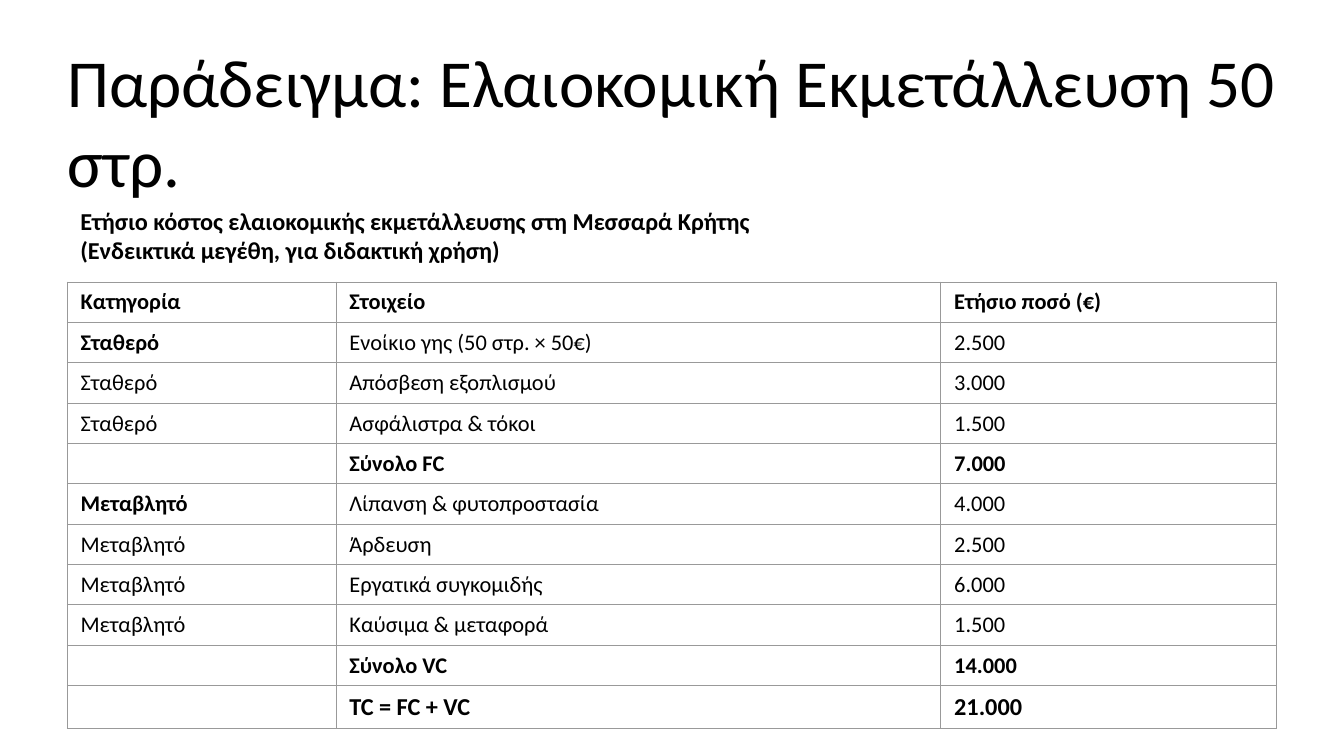
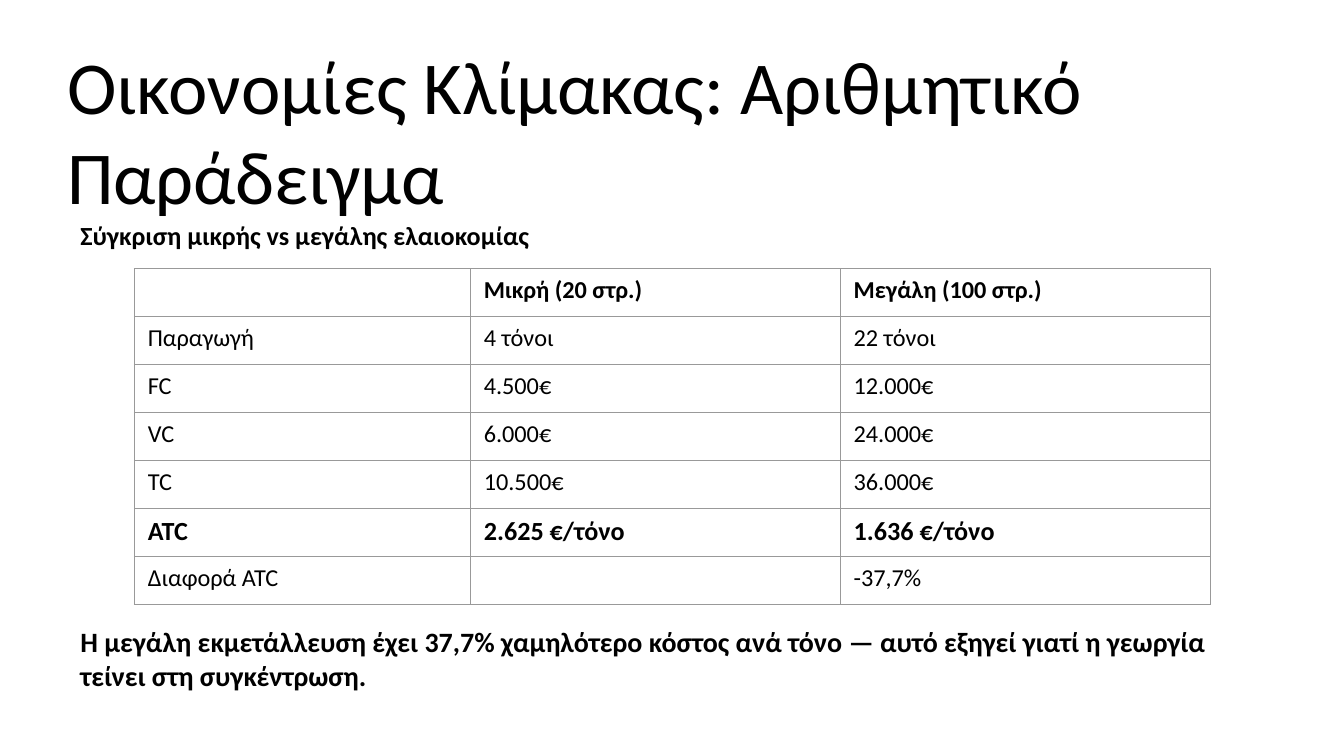
from pptx import Presentation
from pptx.dml.color import RGBColor
from pptx.enum.text import MSO_ANCHOR
from pptx.oxml.xmlchemy import OxmlElement
from pptx.util import Cm, Pt

COST_ROWS = [
    ("Κατηγορία", "Στοιχείο", "Ετήσιο ποσό (€)"),
    ("Σταθερό", "Ενοίκιο γης (50 στρ. × 50€)", "2.500"),
    ("Σταθερό", "Απόσβεση εξοπλισμού", "3.000"),
    ("Σταθερό", "Ασφάλιστρα & τόκοι", "1.500"),
    ("", "Σύνολο FC", "7.000"),
    ("Μεταβλητό", "Λίπανση & φυτοπροστασία", "4.000"),
    ("Μεταβλητό", "Άρδευση", "2.500"),
    ("Μεταβλητό", "Εργατικά συγκομιδής", "6.000"),
    ("Μεταβλητό", "Καύσιμα & μεταφορά", "1.500"),
    ("", "Σύνολο VC", "14.000"),
    ("", "TC = FC + VC", "21.000"),
]

SCALE_ROWS = [
    ("", "Μικρή (20 στρ.)", "Μεγάλη (100 στρ.)"),
    ("Παραγωγή", "4 τόνοι", "22 τόνοι"),
    ("FC", "4.500€", "12.000€"),
    ("VC", "6.000€", "24.000€"),
    ("TC", "10.500€", "36.000€"),
    ("ATC", "2.625 €/τόνο", "1.636 €/τόνο"),
    ("Διαφορά ATC", "", "-37,7%"),
]


def color(value):
    return RGBColor.from_string(value)


class LessonDeck:
    font = "Calibri"
    ink = "000000"
    rule = "999999"
    left = 1.27
    width = 22.86

    def __init__(self):
        self.deck = Presentation()
        self.deck.slide_width = Cm(25.4)
        self.deck.slide_height = Cm(14.29)
        self.page = None

    def add_page(self, title, size):
        self.page = self.deck.slides.add_slide(self.deck.slide_layouts[6])
        frame = self.add_box(0.76, 3.05)
        frame.margin_left = frame.margin_right = 0
        frame.margin_top = frame.margin_bottom = 0
        self.add_span(frame.paragraphs[0], title, size)

    def add_box(self, top, height):
        box = self.page.shapes.add_textbox(
            Cm(self.left), Cm(top), Cm(self.width), Cm(height))
        box.text_frame.word_wrap = True
        return box.text_frame

    def add_span(self, para, text, size, bold=False):
        span = para.add_run()
        span.text = text
        span.font.name = self.font
        span.font.size = Pt(size)
        span.font.bold = bold
        span.font.color.rgb = color(self.ink)

    def add_note(self, top, height, size, *lines):
        frame = self.add_box(top, height)
        frame.vertical_anchor = MSO_ANCHOR.MIDDLE
        for index, line in enumerate(lines):
            para = frame.add_paragraph() if index else frame.paragraphs[0]
            self.add_span(para, line, size, True)

    def add_table(self, left, top, widths, height, rows, size,
                  total_row, bold_rows, bold_cells=()):
        frame = self.page.shapes.add_table(
            len(rows), len(widths), Cm(left), Cm(top),
            Cm(sum(widths)), Cm(height))
        table = frame.table
        table.first_row = table.horz_banding = False
        for column, width in zip(table.columns, widths):
            column.width = Cm(width)
        for r, texts in enumerate(rows):
            row_size = size + 1 if r == total_row else size
            for c, text in enumerate(texts):
                bold = r in bold_rows or (r, c) in bold_cells
                self.fill_cell(table.cell(r, c), text, row_size, bold)

    def fill_cell(self, cell, text, size, bold):
        para = cell.text_frame.paragraphs[0]
        if text:
            self.add_span(para, text, size, bold)
        else:
            end = OxmlElement("a:endParaRPr")
            end.set("sz", str(size * 100))
            para._p.append(end)
        self.add_borders(cell)
        cell.fill.background()

    def add_borders(self, cell):
        properties = cell._tc.get_or_add_tcPr()
        for side in ("a:lnL", "a:lnR", "a:lnT", "a:lnB"):
            line = OxmlElement(side)
            line.set("w", str(Pt(0.5)))
            fill = OxmlElement("a:solidFill")
            shade = OxmlElement("a:srgbClr")
            shade.set("val", self.rule)
            fill.append(shade)
            line.append(fill)
            properties.append(line)


def main():
    lesson = LessonDeck()

    lesson.add_page("Παράδειγμα: Ελαιοκομική Εκμετάλλευση 50 στρ.", 36)
    lesson.add_note(3.81, 1.27, 13,
                    "Ετήσιο κόστος ελαιοκομικής εκμετάλλευσης στη Μεσσαρά Κρήτης",
                    "(Ενδεικτικά μεγέθη, για διδακτική χρήση)")
    lesson.add_table(1.27, 5.33, (5.08, 11.43, 6.35), 8.1, COST_ROWS, 12,
                     total_row=10, bold_rows=(0, 4, 9, 10),
                     bold_cells=((1, 0), (5, 0)))

    lesson.add_page("Οικονομίες Κλίμακας: Αριθμητικό Παράδειγμα", 40)
    lesson.add_note(4.06, 0.76, 14, "Σύγκριση μικρής vs μεγάλης ελαιοκομίας")
    lesson.add_table(2.54, 5.08, (6.35, 6.99, 6.99), 6.35, SCALE_ROWS, 13,
                     total_row=5, bold_rows=(0, 5))
    lesson.add_note(11.68, 1.52, 15,
                    "Η μεγάλη εκμετάλλευση έχει 37,7% χαμηλότερο κόστος ανά τόνο"
                    " — αυτό εξηγεί γιατί η γεωργία τείνει στη συγκέντρωση.")

    lesson.deck.save("out.pptx")


if __name__ == "__main__":
    main()
